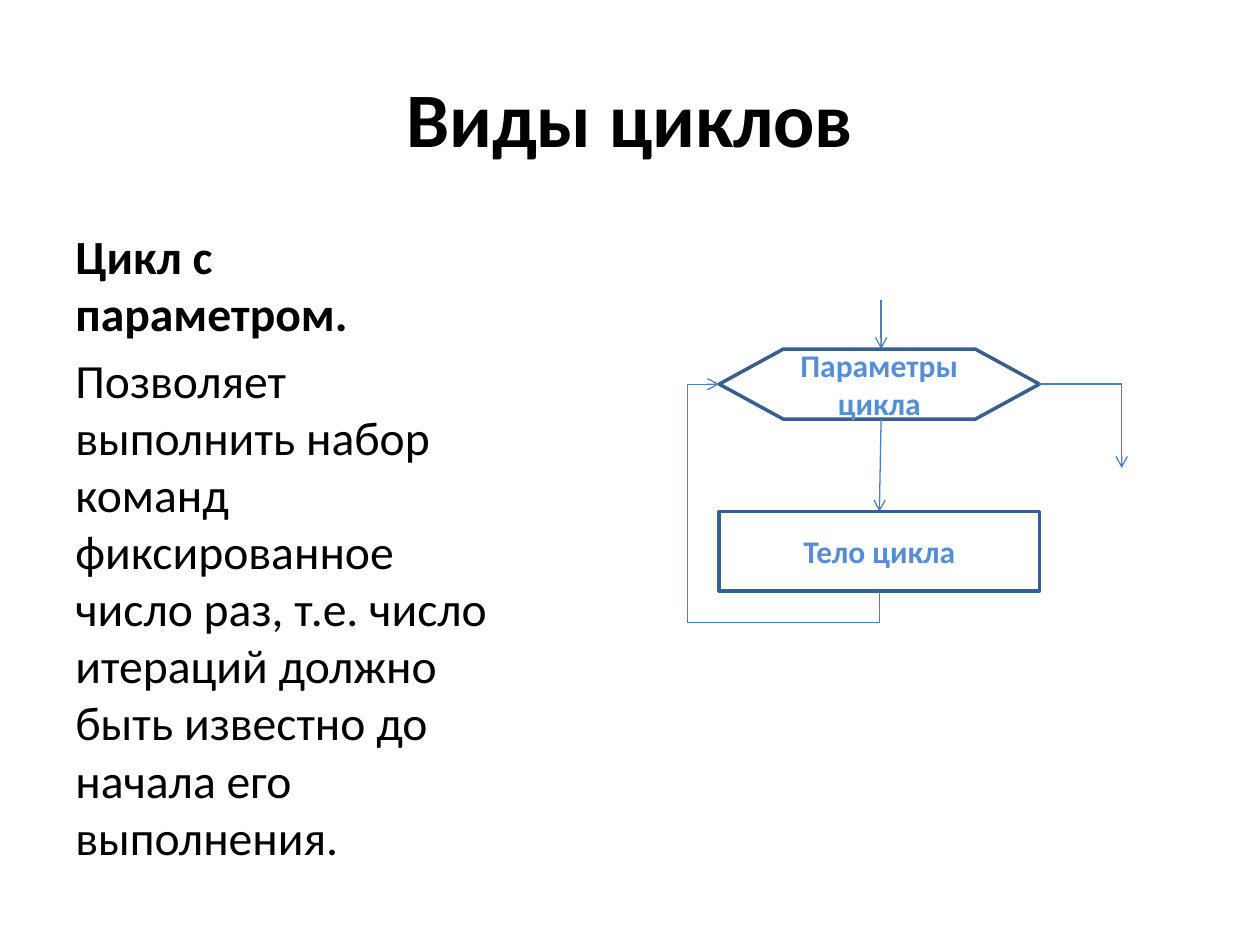
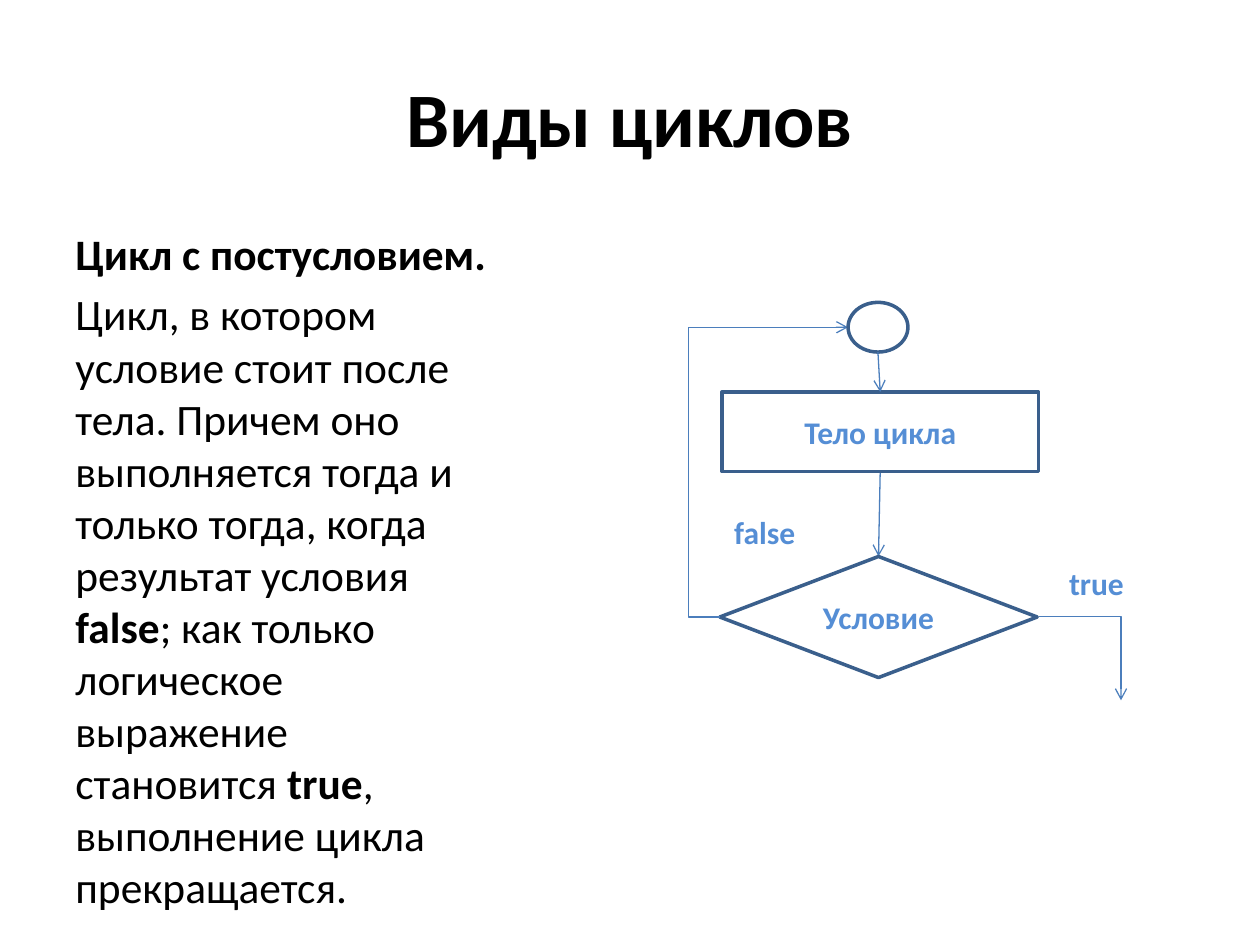
"""Build two slides on kinds of loops, each with a text column and a flowchart."""
from dataclasses import dataclass

from lxml import etree
from pptx import Presentation
from pptx.dml.color import RGBColor
from pptx.enum import shapes, text
from pptx.oxml import ns
from pptx.util import Pt

BLACK = RGBColor(0x00, 0x00, 0x00)
OUTLINE = RGBColor(0x3A, 0x5F, 0x8C)
ARROW = RGBColor(0x4B, 0x7E, 0xBC)
LABEL = RGBColor(0x55, 0x8E, 0xD5)
FONT = "Calibri"
TITLE = "Виды циклов"
KIND = shapes.MSO_SHAPE
CENTER = text.PP_ALIGN.CENTER
LEFT = text.PP_ALIGN.LEFT
MIDDLE = text.MSO_ANCHOR.MIDDLE
TOP = text.MSO_ANCHOR.TOP

Spans = list[tuple[str, bool]]
Point = tuple[float, float]
Area = tuple[float, float, float, float]


@dataclass(frozen=True)
class Node:
    """A flowchart block."""

    kind: KIND
    area: Area
    label: str = ""


@dataclass(frozen=True)
class Arrow:
    """A straight or bent arrow between two points."""

    start: Point
    end: Point
    preset: str = "line"
    rotation: int = 0
    flipped: bool = False
    adjustments: tuple[int, ...] = ()


@dataclass(frozen=True)
class Caption:
    """A free label beside a branch."""

    label: str
    area: Area


@dataclass(frozen=True)
class LoopSlide:
    """The contents of one slide."""

    size: float
    body_height: float
    paragraphs: list[Spans]
    flowchart: list[Node | Arrow | Caption]


SLIDES = [
    LoopSlide(
        27.2, 356.4,
        [
            [("Цикл с параметром.", True)],
            [("Позволяет выполнить набор команд фиксированное число раз, т.е. число "
              "итераций должно быть известно до начала его выполнения.", False)],
        ],
        [
            Arrow((503.5, 171.4), (503.5, 199.5)),
            Node(KIND.FLOWCHART_PREPARATION, (411, 199.5, 183, 40), "Параметры цикла"),
            Arrow((503.5, 239.5), (502.5, 292.4)),
            Node(KIND.RECTANGLE, (411, 292.4, 183, 45.4), "Тело цикла"),
            Arrow((502.5, 337.8), (411, 219.5), "bentConnector4", 90, True, (-15200, 119700)),
            Arrow((594, 219.5), (641, 267.5), "bentConnector2"),
        ],
    ),
    LoopSlide(
        24.8, 382.3,
        [
            [("Цикл с постусловием.", True)],
            [("Цикл, в котором условие стоит после тела. Причем оно выполняется тогда "
              "и только тогда, когда результат условия ", False),
             ("false", True),
             ("; как только логическое выражение становится ", False),
             ("true", True),
             (", выполнение цикла прекращается.", False)],
        ],
        [
            Arrow((503, 269.4), (502, 318)),
            Node(KIND.RECTANGLE, (412.5, 224, 181, 45.4), "Тело цикла"),
            Arrow((593.5, 352.4), (640.6, 400.2), "bentConnector2"),
            Node(KIND.FLOWCHART_DECISION, (411.3, 318, 181.4, 69.2), "Условие"),
            Caption("true", (603.8, 318.6, 46, 29)),
            Caption("false", (412.5, 289.8, 50, 29)),
            Arrow((411.3, 352.6), (484.6, 187), "bentConnector3", 180, True, (-24400,)),
            Node(KIND.OVAL, (484.6, 172.8, 34.2, 28.4)),
            Arrow((501.7, 201.2), (503, 224)),
        ],
    ),
]


def write(box, paragraphs: list[Spans], size: float, color: RGBColor,
          align=LEFT, anchor=TOP, wrap: bool = True, space: float = 0) -> None:
    """Fill a shape with formatted paragraphs."""
    frame = box.text_frame
    frame.word_wrap = wrap
    frame.vertical_anchor = anchor
    frame.auto_size = (text.MSO_AUTO_SIZE.NONE if wrap
                       else text.MSO_AUTO_SIZE.SHAPE_TO_FIT_TEXT)
    for index, spans in enumerate(paragraphs):
        para = frame.add_paragraph() if index else frame.paragraphs[0]
        para.alignment = align
        para.space_before = Pt(space)
        for words, bold in spans:
            span = para.add_run()
            span.text = words
            for name, value in {"name": FONT, "size": Pt(size), "bold": bold}.items():
                setattr(span.font, name, value)
            span.font.color.rgb = color


def add_box(page, area: Area):
    """Add a text box at a place given in points."""
    return page.shapes.add_textbox(*map(Pt, area))


def add_node(page, node: Node) -> None:
    """Draw an outlined flowchart block."""
    shape = page.shapes.add_shape(node.kind, *map(Pt, node.area))
    shape.shadow.inherit = False
    shape.fill.background()
    shape.line.color.rgb = OUTLINE
    shape.line.width = Pt(2)
    if node.label:
        write(shape, [[(node.label, True)]], 18, LABEL, CENTER, MIDDLE)


def add_arrow(page, arrow: Arrow) -> None:
    """Draw an arrow, turning the frame of a bent one about its centre."""
    (x1, y1), (x2, y2) = arrow.start, arrow.end
    bent = arrow.preset != "line"
    if bent:
        width, height = abs(x2 - x1), abs(y2 - y1)
        if arrow.rotation == 90:
            width, height = height, width
        middle_x, middle_y = (x1 + x2) / 2, (y1 + y2) / 2
        x1, x2 = middle_x - width / 2, middle_x + width / 2
        y1, y2 = middle_y - height / 2, middle_y + height / 2
    style = shapes.MSO_CONNECTOR.ELBOW if bent else shapes.MSO_CONNECTOR.STRAIGHT
    line = page.shapes.add_connector(style, Pt(x1), Pt(y1), Pt(x2), Pt(y2))
    line.line.color.rgb = ARROW
    line.line.width = Pt(0.75)
    properties = line.element.spPr
    frame = properties.find(ns.qn("a:xfrm"))
    if arrow.rotation:
        frame.set("rot", str(arrow.rotation * 60000))
    if arrow.flipped:
        frame.set("flipH", "1")
    geometry = properties.find(ns.qn("a:prstGeom"))
    geometry.set("prst", arrow.preset)
    guides = geometry.find(ns.qn("a:avLst"))
    for number, value in enumerate(arrow.adjustments, 1):
        etree.SubElement(guides, ns.qn("a:gd"), name=f"adj{number}", fmla=f"val {value}")
    etree.SubElement(properties.find(ns.qn("a:ln")), ns.qn("a:tailEnd"), type="arrow")
    etree.SubElement(properties, ns.qn("a:effectLst"))


def add_caption(page, caption: Caption) -> None:
    """Write a branch label that does not wrap."""
    write(add_box(page, caption.area), [[(caption.label, True)]], 18, LABEL, wrap=False)


DRAW = {Node: add_node, Arrow: add_arrow, Caption: add_caption}


def add_slide(deck, content: LoopSlide) -> None:
    """Add a slide with its title, text column and flowchart."""
    page = deck.slides.add_slide(deck.slide_layouts[6])
    write(add_box(page, (36, 21.6, 648, 90)), [[(TITLE, True)]], 44, BLACK, CENTER, MIDDLE)
    write(add_box(page, (36, 126, 250.6, content.body_height)), content.paragraphs,
          content.size, BLACK, space=round(content.size * 0.2, 1))
    for item in content.flowchart:
        DRAW[type(item)](page, item)


def main() -> None:
    """Build and save the deck."""
    deck = Presentation()
    deck.slide_width, deck.slide_height = Pt(720), Pt(540)
    for content in SLIDES:
        add_slide(deck, content)
    deck.save("out.pptx")


if __name__ == "__main__":
    main()
